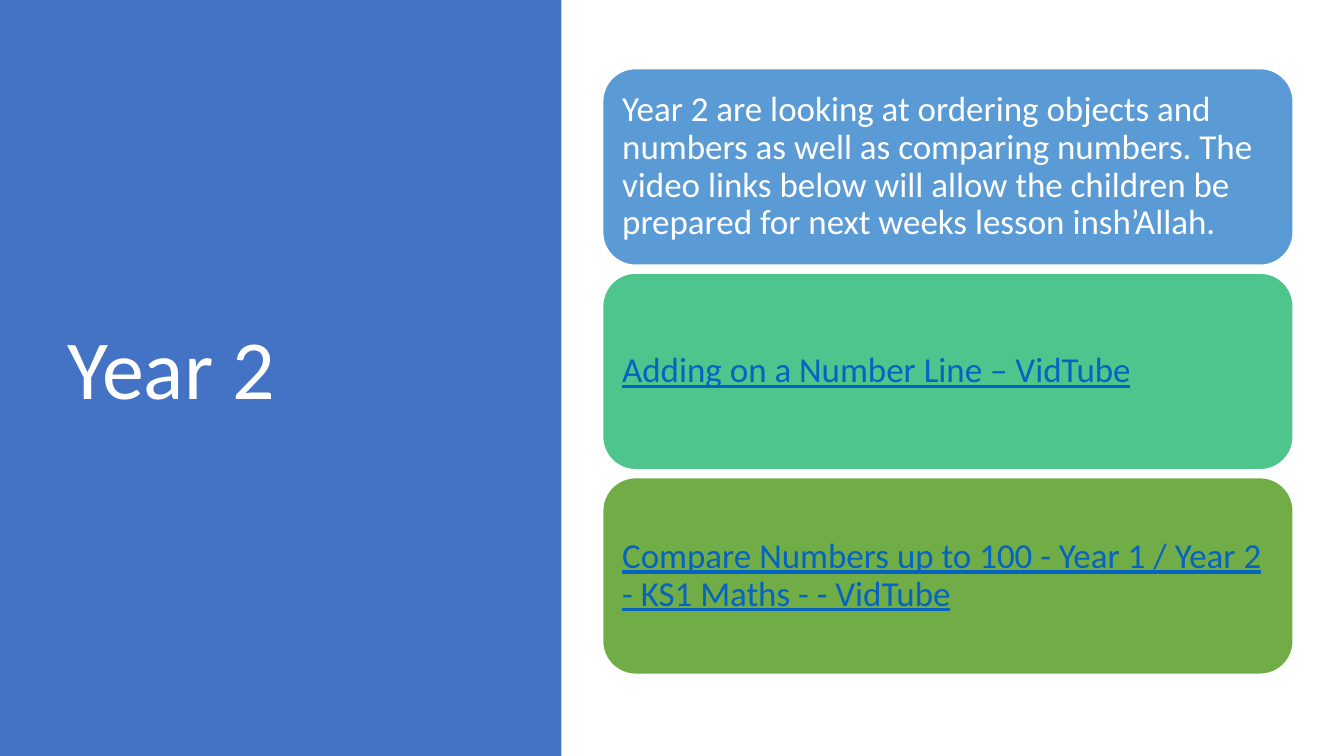
"""Build the Year 2 maths slide with its title panel and three video cards."""
from pptx import Presentation
from pptx.dml.color import RGBColor
from pptx.enum.shapes import MSO_SHAPE as Shape
from pptx.enum.text import MSO_ANCHOR as Anchor, PP_ALIGN as Align
from pptx.util import Pt

COLORS = {
    "panel": "4472C4",
    "intro": "5B9BD5",
    "adding": "4DC58D",
    "comparing": "70AD47",
    "white": "FFFFFF",
    "link": "0563C1",
}
CARDS = [
    ("intro", "white", "Year 2 are looking at ordering objects and numbers as well as "
     "comparing numbers. The video links below will allow the children be prepared "
     "for next weeks lesson insh’Allah."),
    ("adding", "link", "Adding on a Number Line – VidTube"),
    ("comparing", "link", "Compare Numbers up to 100 - Year 1 / Year 2 - KS1 Maths - - VidTube"),
]
CARD_LEFT, CARD_TOP, CARD_WIDTH, CARD_HEIGHT, CARD_PITCH = 430.5, 49, 493.2, 140.4, 146.1


def color(name):
    return RGBColor.from_string(COLORS[name])


def write(holder, text, size, ink):
    frame = holder.text_frame
    frame.word_wrap = True
    frame.vertical_anchor = Anchor.MIDDLE
    frame.margin_left = frame.margin_right = Pt(7.2)
    frame.margin_top = frame.margin_bottom = Pt(7.2)
    paragraph = frame.paragraphs[0]
    paragraph.text = text
    paragraph.alignment = Align.LEFT
    paragraph.line_spacing = 0.9
    paragraph.font.name = "Calibri"
    paragraph.font.size = Pt(size)
    paragraph.font.color.rgb = color(ink)
    paragraph.font.underline = ink == "link"


prs = Presentation()
prs.slide_width, prs.slide_height = Pt(960), Pt(540)
slide = prs.slides.add_slide(prs.slide_layouts[6])

panel = slide.shapes.add_shape(Shape.RECTANGLE, 0, 0, Pt(401), Pt(540))
panel.shadow.inherit = False
panel.fill.solid()
panel.fill.fore_color.rgb = color("panel")
panel.line.fill.background()

title = slide.shapes.add_textbox(Pt(41), Pt(49), Pt(299.5), Pt(433.5))
write(title, "Year 2", 60, "white")

for row, (fill, ink, text) in enumerate(CARDS):
    card = slide.shapes.add_shape(
        Shape.ROUNDED_RECTANGLE, Pt(CARD_LEFT), Pt(CARD_TOP + row * CARD_PITCH),
        Pt(CARD_WIDTH), Pt(CARD_HEIGHT))
    card.shadow.inherit = False
    card.fill.solid()
    card.fill.fore_color.rgb = color(fill)
    card.line.color.rgb = color("white")
    card.line.width = Pt(1)
    write(card, text, 25, ink)

prs.save("out.pptx")
